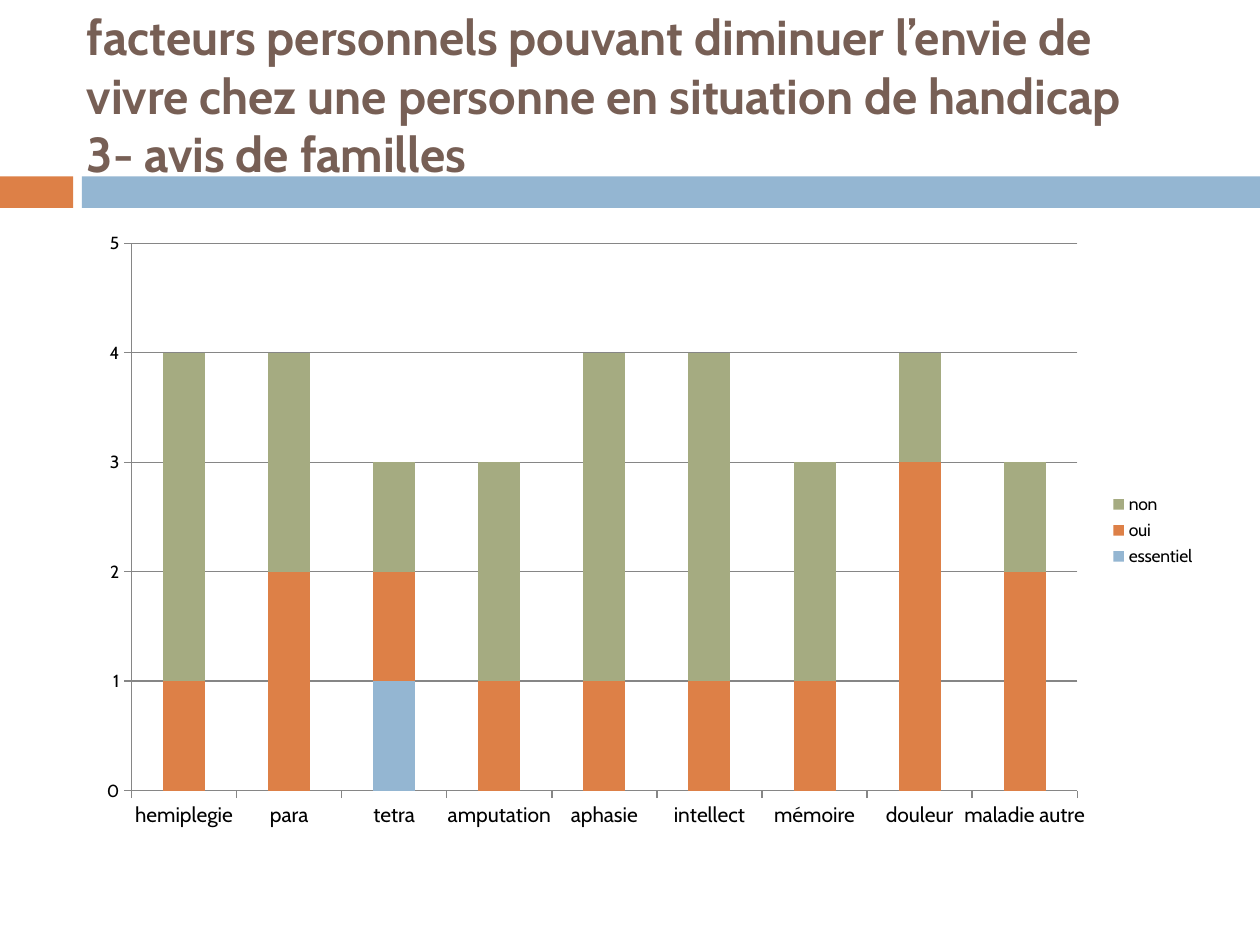
import pptx
import pptx.chart.data
import pptx.dml.color
import pptx.enum.chart
import pptx.enum.shapes
import pptx.enum.text
import pptx.util
from pptx.util import Inches

FONT = "Cabin"


def color(hex_string):
    return pptx.dml.color.RGBColor.from_string(hex_string)


def write_text(frame, text, size, fill, bold=False):
    frame.word_wrap = True
    frame.vertical_anchor = pptx.enum.text.MSO_ANCHOR.MIDDLE
    frame.text = text
    for paragraph in frame.paragraphs:
        paragraph.font.name = FONT
        paragraph.font.size = pptx.util.Pt(size)
        paragraph.font.bold = bold
        paragraph.font.color.rgb = color(fill)


deck = pptx.Presentation()
deck.slide_width = Inches(10)
deck.slide_height = Inches(7.5)
slide = deck.slides.add_slide(deck.slide_layouts[6])

for left, width, fill in [(0, 0.58, "DD8047"), (0.65, 9.35, "94B6D2")]:
    band = slide.shapes.add_shape(
        pptx.enum.shapes.MSO_SHAPE.RECTANGLE,
        Inches(left), Inches(1.4), Inches(width), Inches(0.25))
    band.shadow.inherit = False
    band.fill.solid()
    band.fill.fore_color.rgb = color(fill)
    band.line.fill.background()

title = slide.shapes.add_textbox(Inches(0.59), Inches(0.21), Inches(8.92), Inches(1.08))
write_text(
    title.text_frame,
    "facteurs personnels pouvant diminuer l’envie de vivre chez une personne "
    "en situation de handicap\v3- avis de familles",
    size=28, fill="775F55", bold=True)

answers = [
    ("essentiel", [0, 0, 1, 0, 0, 0, 0, 0, 0], "94B6D2"),
    ("oui", [1, 2, 1, 1, 1, 1, 1, 3, 2], "DD8047"),
    ("non", [3, 2, 1, 2, 3, 3, 2, 1, 1], "A5AB81"),
]
opinions = pptx.chart.data.CategoryChartData(number_format="#,##0")
opinions.categories = ["hemiplegie", "para", "tetra", "amputation", "aphasie",
                       "intellect", "mémoire", "douleur", "maladie autre"]
for answer, counts, fill in answers:
    opinions.add_series(answer, counts)

chart = slide.shapes.add_chart(
    pptx.enum.chart.XL_CHART_TYPE.COLUMN_STACKED,
    Inches(0.67), Inches(1.75), Inches(8.92), Inches(4.92), opinions).chart
chart.has_title = False
chart.font.name = FONT
chart.font.size = pptx.util.Pt(10)
chart.font.color.rgb = color("000000")
chart.has_legend = True
chart.legend.position = pptx.enum.chart.XL_LEGEND_POSITION.RIGHT
chart.legend.include_in_layout = False

plot = chart.plots[0]
plot.gap_width = 150
plot.overlap = 100
plot.vary_by_categories = False
for series, (answer, counts, fill) in zip(plot.series, answers):
    series.format.fill.solid()
    series.format.fill.fore_color.rgb = color(fill)

disabilities = chart.category_axis
scale = chart.value_axis
disabilities.tick_labels.font.size = pptx.util.Pt(12)
scale.minimum_scale = 0
scale.maximum_scale = 5
scale.major_unit = 1
scale.has_major_gridlines = True
scale.tick_labels.number_format = "#,##0"
scale.tick_labels.number_format_is_linked = False
for axis in (disabilities, scale):
    axis.major_tick_mark = pptx.enum.chart.XL_TICK_MARK.OUTSIDE
for part in (disabilities, scale, scale.major_gridlines):
    part.format.line.color.rgb = color("868686")
    part.format.line.width = pptx.util.Pt(0.75)

deck.save("out.pptx")
